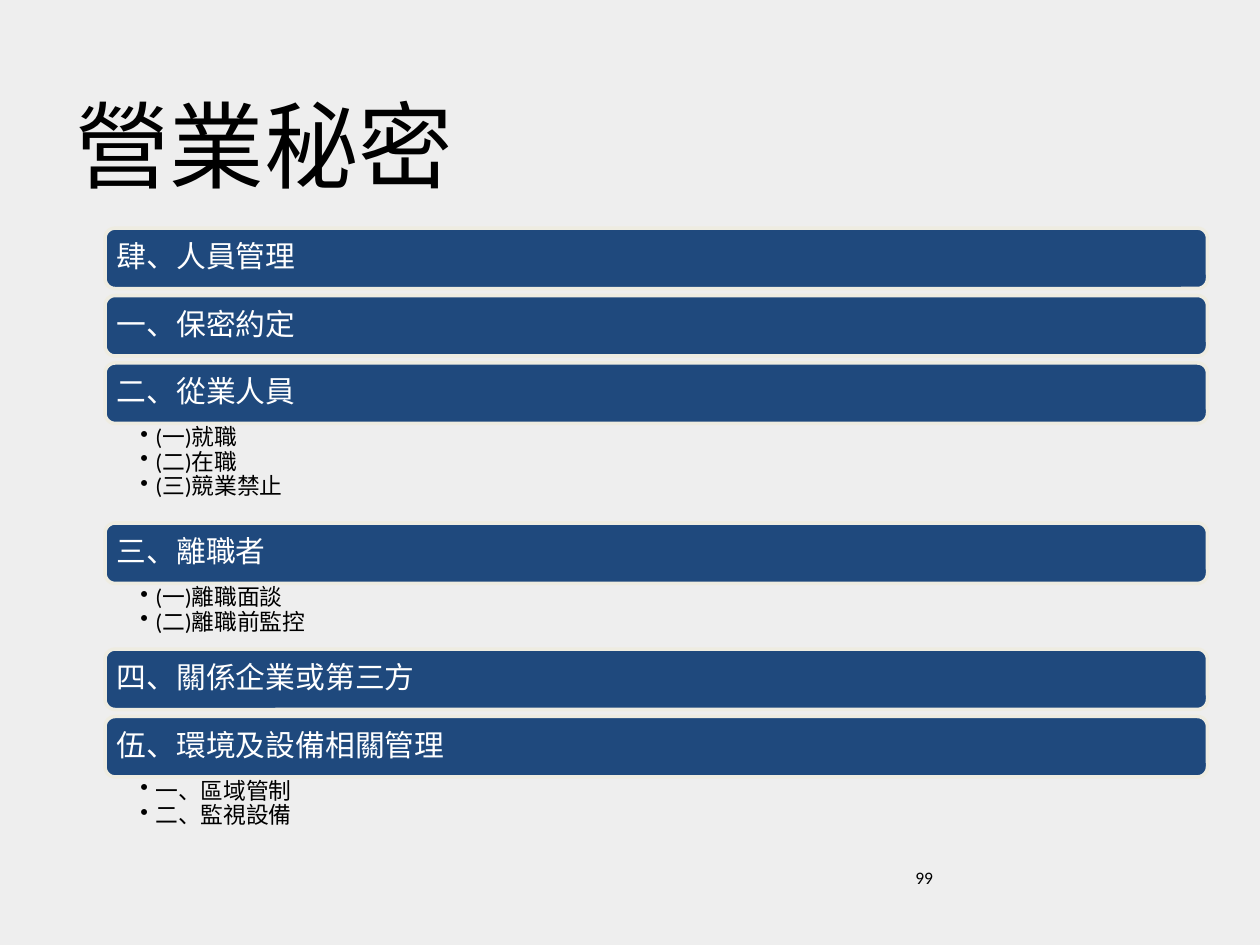
from dataclasses import dataclass

from lxml import etree
from pptx import Presentation
from pptx.dml.color import RGBColor
from pptx.enum.shapes import MSO_SHAPE
from pptx.enum.text import MSO_ANCHOR, PP_ALIGN
from pptx.oxml.ns import qn
from pptx.util import Emu, Inches, Pt

ROUNDED = MSO_SHAPE.ROUNDED_RECTANGLE
TOP, MIDDLE, BOTTOM = MSO_ANCHOR.TOP, MSO_ANCHOR.MIDDLE, MSO_ANCHOR.BOTTOM
LEFT = PP_ALIGN.LEFT

# Page grid
WIDTH, HEIGHT = Inches(10), Inches(7.5)
COLUMN, ROW = WIDTH / 120, HEIGHT / 125


@dataclass(frozen=True)
class Theme:
    background: RGBColor = RGBColor(0xEE, 0xEE, 0xEE)
    bar: RGBColor = RGBColor(0x1F, 0x49, 0x7D)
    outline: RGBColor = RGBColor(0xEE, 0xEC, 0xE1)
    light: RGBColor = RGBColor(0xFF, 0xFF, 0xFF)
    dark: RGBColor = RGBColor(0, 0, 0)
    title_font: str = "Noto Sans CJK SC"
    body_font: str = "Calibri"
    title_size: int = 54
    heading_size: int = 17
    item_size: int = 13
    number_size: int = 10


@dataclass(frozen=True)
class Area:
    """A rectangle in grid columns and rows."""
    left: float
    top: float
    width: float
    height: float

    def lengths(self) -> tuple[Emu, ...]:
        return (Emu(round(self.left * COLUMN)), Emu(round(self.top * ROW)),
                Emu(round(self.width * COLUMN)), Emu(round(self.height * ROW)))


@dataclass(frozen=True)
class Section:
    heading: str
    items: tuple[str, ...] = ()


THEME = Theme()
TITLE_AREA = Area(6, 6.5, 108, 20.83)
NUMBER_AREA = Area(86, 113.83, 28, 8.67)
LIST_LEFT, LIST_TOP, LIST_WIDTH = 10, 30.17, 105
BAR_ROWS, GAP_ROWS = 8, 0.92
ITEM_ROWS, ITEMS_TRIM = 4.5, 0.33
BULLET_INDENT = Inches(0.12)

SECTIONS = (
    Section("肆、人員管理"),
    Section("一、保密約定"),
    Section("二、從業人員", ("(一)就職", "(二)在職", "(三)競業禁止")),
    Section("三、離職者", ("(一)離職面談", "(二)離職前監控")),
    Section("四、關係企業或第三方"),
    Section("伍、環境及設備相關管理", ("一、區域管制", "二、監視設備")),
)


def set_insets(frame, left: float, top: float, right: float, bottom: float) -> None:
    frame.margin_left, frame.margin_top = Inches(left), Inches(top)
    frame.margin_right, frame.margin_bottom = Inches(right), Inches(bottom)


def add_bullet(para) -> None:
    properties = para._p.get_or_add_pPr()
    properties.set("marL", str(BULLET_INDENT))
    properties.set("indent", str(-BULLET_INDENT))
    etree.SubElement(properties, qn("a:buChar")).set("char", "•")


def write(frame, lines: tuple[str, ...], size: int, color: RGBColor,
          font: str = THEME.body_font, anchor=TOP, spacing: float = 1.0,
          bulleted: bool = False) -> None:
    frame.word_wrap = True
    frame.vertical_anchor = anchor
    for index, line in enumerate(lines):
        para = frame.add_paragraph() if index else frame.paragraphs[0]
        para.text = line
        if bulleted:
            add_bullet(para)
        para.alignment = LEFT
        para.line_spacing = spacing
        para.font.name = font
        para.font.size = Pt(size)
        para.font.color.rgb = color


def draw_bar(page, area: Area, heading: str) -> None:
    bar = page.shapes.add_shape(ROUNDED, *area.lengths())
    bar.shadow.inherit = False
    bar.fill.solid()
    bar.fill.fore_color.rgb = THEME.bar
    bar.line.color.rgb = THEME.outline
    bar.line.width = Pt(2)
    set_insets(bar.text_frame, 0.07, 0.07, 0.07, 0.07)
    write(bar.text_frame, (heading,), THEME.heading_size, THEME.light,
          anchor=MIDDLE, spacing=0.9)


def draw_items(page, area: Area, items: tuple[str, ...]) -> None:
    frame = page.shapes.add_textbox(*area.lengths()).text_frame
    set_insets(frame, 0.28, 0.02, 0.13, 0.02)
    write(frame, items, THEME.item_size, THEME.dark, spacing=0.9, bulleted=True)


def draw_sections(page, sections: tuple[Section, ...]) -> None:
    top = LIST_TOP
    for section in sections:
        draw_bar(page, Area(LIST_LEFT, top, LIST_WIDTH, BAR_ROWS), section.heading)
        top += BAR_ROWS
        if section.items:
            rows = ITEM_ROWS * len(section.items) - ITEMS_TRIM
            draw_items(page, Area(LIST_LEFT, top, LIST_WIDTH, rows), section.items)
            top += rows
        else:
            top += GAP_ROWS


def main() -> None:
    deck = Presentation()
    deck.slide_width, deck.slide_height = WIDTH, HEIGHT
    page = deck.slides.add_slide(deck.slide_layouts[6])
    page.background.fill.solid()
    page.background.fill.fore_color.rgb = THEME.background

    # Outline of sections
    draw_sections(page, SECTIONS)

    # Title and page number
    title = page.shapes.add_textbox(*TITLE_AREA.lengths())
    write(title.text_frame, ("營業秘密",), THEME.title_size, THEME.dark,
          font=THEME.title_font, anchor=BOTTOM)
    number = page.shapes.add_textbox(*NUMBER_AREA.lengths())
    write(number.text_frame, ("99",), THEME.number_size, THEME.dark)

    deck.save("out.pptx")


if __name__ == "__main__":
    main()
